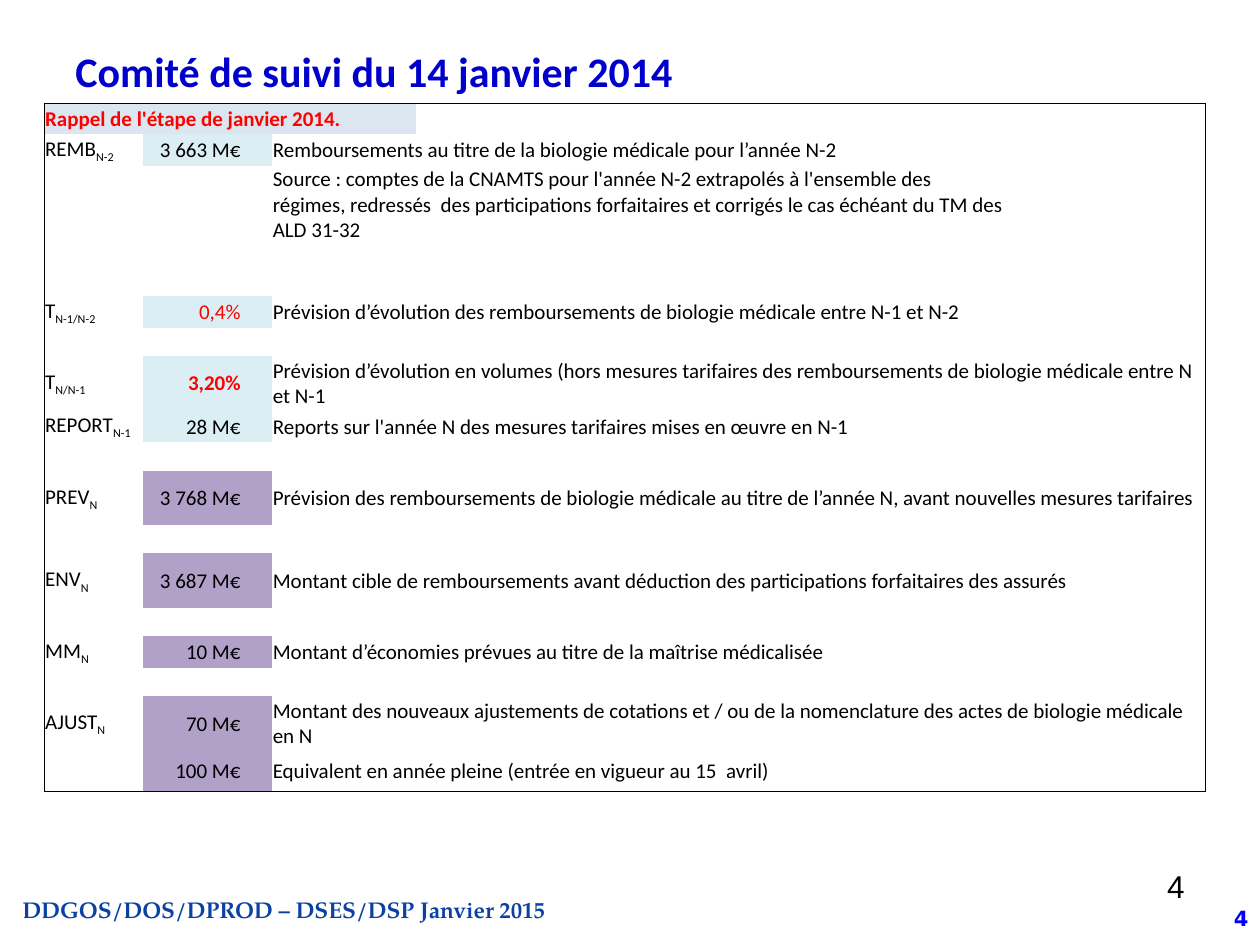
from pptx import Presentation
from pptx.dml.color import RGBColor
from pptx.enum.text import MSO_ANCHOR, PP_ALIGN
from pptx.oxml import parse_xml
from pptx.oxml.ns import nsdecls
from pptx.util import Cm, Pt

LEFT, RIGHT = PP_ALIGN.LEFT, PP_ALIGN.RIGHT
TOP, MIDDLE = MSO_ANCHOR.TOP, MSO_ANCHOR.MIDDLE

BLACK = RGBColor(0x00, 0x00, 0x00)
RED = RGBColor(0xFF, 0x00, 0x00)
TITLE_BLUE = RGBColor(0x00, 0x00, 0xCC)
NUMBER_BLUE = RGBColor(0x00, 0x00, 0xFF)
FOOTER_BLUE = RGBColor(0x0C, 0x41, 0xA4)
HEADING_FILL = RGBColor(0xDC, 0xE6, 0xF1)
INPUT_FILL = RGBColor(0xDA, 0xEE, 0xF3)
RESULT_FILL = RGBColor(0xB1, 0xA0, 0xC7)
NO_GRID_STYLE = "{2D5ABB26-0587-4C30-8999-92F81FD0307C}"

# Text, left, top, width, height, font, size, bold, colour, alignment
TEXTS = [
    ("DDGOS/DOS/DPROD – DSES/DSP Janvier 2015", 0.2, 17.93, 14.3, 0.81,
     "TeX Gyre Pagella", 13, True, FOOTER_BLUE, LEFT),
    ("4", 19.5, 18.14, 5.92, 1.32, "DejaVu Sans", 12, True, NUMBER_BLUE, RIGHT),
    ("Comité de suivi du 14 janvier 2014", 1.27, 0.8, 22.86, 1.96,
     "Calibri", 24, True, TITLE_BLUE, LEFT),
    ("4", 18.21, 17.35, 5.92, 1.32, "Arial", 18, False, BLACK, RIGHT),
]

HEADING = "Rappel de l'étape de janvier 2014."
HEADING_HEIGHT = 0.62
GAP, LINE, TALL = 0.57, 0.64, 1.1
SPACER = (GAP, "", "", "", None, "", 1)

# Row height, symbol, subscript, value, value fill, description, columns spanned
ROWS = [
    (LINE, "REMB", "N-2", "3 663 M€", INPUT_FILL,
     "Remboursements au titre de la biologie médicale pour l’année N-2", 6),
    (2.06, "", "", "", None,
     "Source : comptes de la CNAMTS pour l'année N-2 extrapolés à l'ensemble des  "
     "régimes, redressés  des participations forfaitaires et corrigés le cas "
     "échéant du TM des ALD 31-32", 7),
    SPACER,
    (LINE, "T", "N-1/N-2", "0,4%", INPUT_FILL,
     "Prévision d’évolution des remboursements de biologie médicale entre N-1 et N-2", 7),
    SPACER,
    (TALL, "T", "N/N-1", "3,20%", INPUT_FILL,
     "Prévision d’évolution en volumes (hors mesures tarifaires des remboursements "
     "de biologie médicale entre N et N-1", 9),
    (LINE, "REPORT", "N-1", "28 M€", INPUT_FILL,
     "Reports sur l'année N des mesures tarifaires mises en œuvre en N-1", 6),
    SPACER,
    (TALL, "PREV", "N", "3 768 M€", RESULT_FILL,
     "Prévision des remboursements de biologie médicale au titre de l’année N, "
     "avant nouvelles mesures tarifaires", 9),
    SPACER,
    (TALL, "ENV", "N", "3 687 M€", RESULT_FILL,
     "Montant cible de remboursements avant déduction des participations "
     "forfaitaires des assurés", 8),
    SPACER,
    (LINE, "MM", "N", "10 M€", RESULT_FILL,
     "Montant d’économies prévues au titre de la maîtrise médicalisée", 6),
    SPACER,
    (TALL, "AJUST", "N", "70 M€", RESULT_FILL,
     "Montant des nouveaux ajustements de cotations et / ou de la nomenclature "
     "des actes de biologie médicale en N", 9),
    (0.81, "", "", "100 M€", RESULT_FILL,
     "Equivalent en année pleine (entrée en vigueur au 15  avril)", 5),
]
COLUMN_WIDTHS = [1.99, 1.99, 0.61, 2.9] + [1.99] * 8
RED_VALUES = {"0,4%": False, "3,20%": True}  # value: bold
DESCRIPTION_COLUMN = 3


def style_font(paragraph, name, size, bold, colour):
    font = paragraph.font
    font.name, font.size, font.bold = name, Pt(size), bold
    font.color.rgb = colour


def add_text(slide, text, left, top, width, height, name, size, bold, colour, alignment):
    box = slide.shapes.add_textbox(Cm(left), Cm(top), Cm(width), Cm(height))
    box.text_frame.word_wrap = True
    paragraph = box.text_frame.paragraphs[0]
    paragraph.text = text
    paragraph.alignment = alignment
    style_font(paragraph, name, size, bold, colour)


def add_border(cell, side):
    cell._tc.get_or_add_tcPr().append(parse_xml(
        f'<a:ln{side} {nsdecls("a")} w="6350"><a:solidFill>'
        f'<a:srgbClr val="{BLACK}"/></a:solidFill></a:ln{side}>'))


def fill_cell(cell, text="", fill=None, size=12, bold=False, colour=BLACK,
              alignment=LEFT, subscript="", anchor=MIDDLE):
    cell.margin_left = cell.margin_right = cell.margin_top = Cm(0.02)
    cell.margin_bottom = 0
    cell.vertical_anchor = anchor
    if fill is None:
        cell.fill.background()
    else:
        cell.fill.solid()
        cell.fill.fore_color.rgb = fill
    paragraph = cell.text_frame.paragraphs[0]
    paragraph.alignment = alignment
    if text:
        paragraph.add_run().text = text
    if subscript:
        run = paragraph.add_run()
        run.text = subscript
        run._r.get_or_add_rPr().set("baseline", "-25000")
    style_font(paragraph, "Calibri", size, bold, colour)


def add_budget_table(slide):
    heights = [HEADING_HEIGHT] + [row[0] for row in ROWS]
    last_row, last_column = len(heights) - 1, len(COLUMN_WIDTHS) - 1
    frame = slide.shapes.add_table(
        len(heights), len(COLUMN_WIDTHS), Cm(0.89), Cm(2.08),
        Cm(sum(COLUMN_WIDTHS)), Cm(sum(heights)))
    table = frame.table
    table.first_row = table.horz_banding = False
    table._tbl.tblPr.find("{*}tableStyleId").text = NO_GRID_STYLE
    for column, width in zip(table.columns, COLUMN_WIDTHS):
        column.width = Cm(width)
    for row, height in zip(table.rows, heights):
        row.height = Cm(height)

    # Merged areas: first and last column of each row
    spans = [(0, DESCRIPTION_COLUMN)] + [
        (DESCRIPTION_COLUMN, DESCRIPTION_COLUMN + row[-1] - 1) for row in ROWS]
    for index, (first, last) in enumerate(spans):
        if last > first:
            table.cell(index, first).merge(table.cell(index, last))

    # Outer frame and plain cells
    for index, (first, last) in enumerate(spans):
        for column in range(last_column + 1):
            cell = table.cell(index, column)
            reaches_right = column == first and last == last_column
            edges = (("L", column == 0),
                     ("R", column == last_column or reaches_right),
                     ("T", index == 0), ("B", index == last_row))
            for side, on_edge in edges:
                if on_edge:
                    add_border(cell, side)
            fill_cell(cell, size=8)

    # Content
    fill_cell(table.cell(0, 0), HEADING, HEADING_FILL, bold=True, colour=RED)
    for index, (_, symbol, subscript, value, fill, description, _) in enumerate(ROWS, 1):
        if not description:
            continue
        fill_cell(table.cell(index, 0), symbol, subscript=subscript)
        fill_cell(table.cell(index, 1), value, fill, alignment=RIGHT,
                  bold=RED_VALUES.get(value, False),
                  colour=RED if value in RED_VALUES else BLACK)
        fill_cell(table.cell(index, 2), fill=fill)
        fill_cell(table.cell(index, DESCRIPTION_COLUMN), description,
                  anchor=MIDDLE if value else TOP)


def main():
    presentation = Presentation()
    presentation.slide_width, presentation.slide_height = Cm(25.4), Cm(19.05)
    slide = presentation.slides.add_slide(presentation.slide_layouts[6])
    for item in TEXTS:
        add_text(slide, *item)
    add_budget_table(slide)
    presentation.save("out.pptx")


if __name__ == "__main__":
    main()
